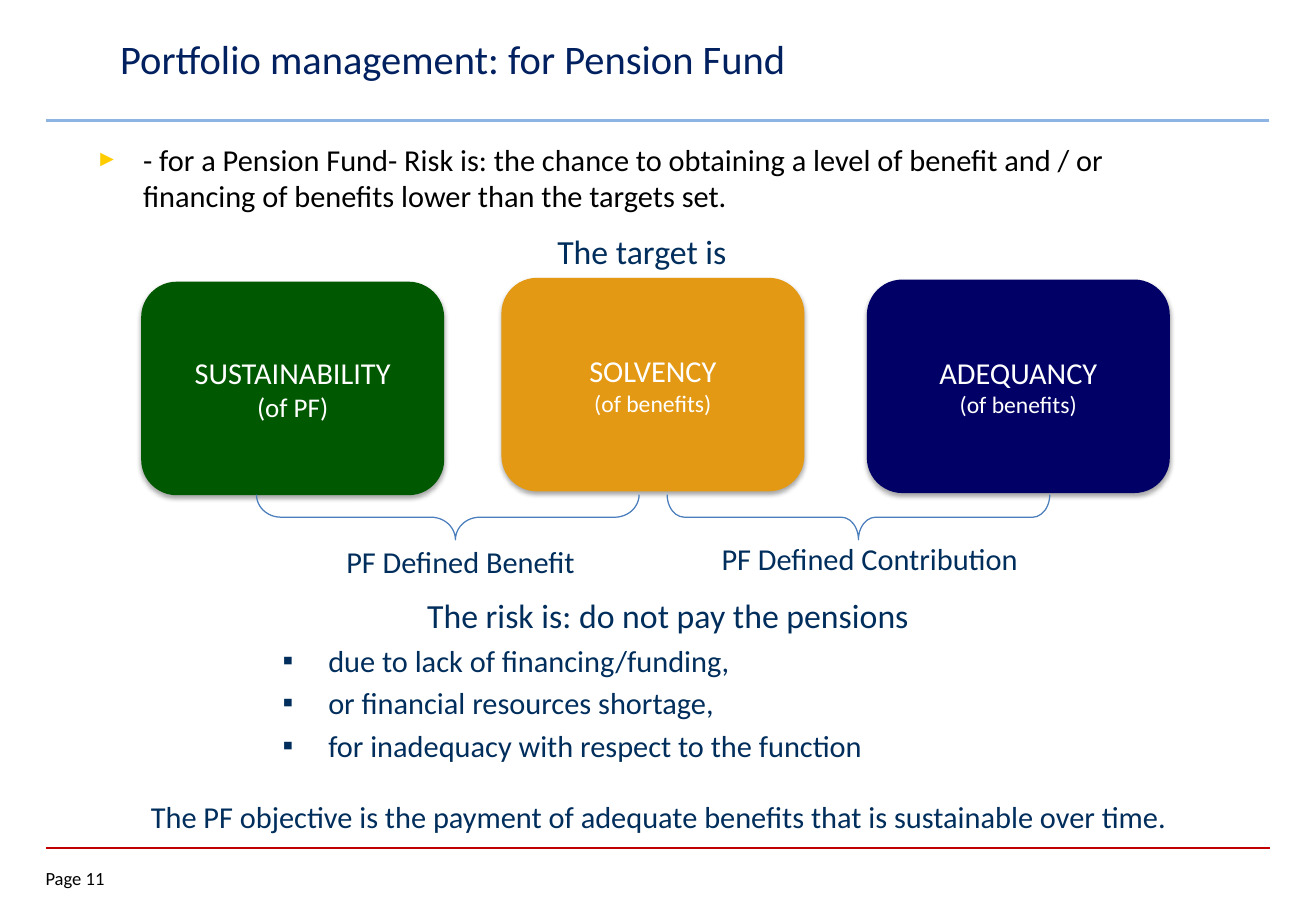
from dataclasses import dataclass

from lxml.etree import SubElement
from pptx import Presentation
from pptx.dml.color import RGBColor
from pptx.enum.shapes import MSO_CONNECTOR, MSO_SHAPE
from pptx.enum.text import MSO_ANCHOR, MSO_AUTO_SIZE, PP_ALIGN
from pptx.oxml.ns import qn
from pptx.util import Pt


@dataclass(frozen=True)
class Theme:
    """Colours, font and type sizes of the slide."""
    font: str = "Calibri"
    title: str = "002060"
    body: str = "000000"
    accent: str = "002E5C"
    light: str = "FFFFFF"
    marker: str = "FFCC00"
    header_rule: str = "8EB4E3"
    footer_rule: str = "C00000"
    brace: str = "4B7EBC"
    sustainability: str = "005800"
    solvency: str = "E39913"
    adequacy: str = "000066"
    title_size: float = 24
    lead_size: float = 20
    body_size: float = 18
    note_size: float = 16
    small_size: float = 14
    page_size: float = 11


THEME = Theme()


def rgb(colour):
    """Turn a hex string into a colour."""
    return RGBColor.from_string(colour)


def points(box):
    """Turn a box of numbers into lengths in points."""
    return [Pt(value) for value in box]


def style(paragraph, size, colour, align=PP_ALIGN.LEFT):
    """Set the font and alignment of a paragraph."""
    paragraph.alignment = align
    paragraph.font.name = THEME.font
    paragraph.font.size = Pt(size)
    paragraph.font.color.rgb = rgb(colour)


def indent(paragraph, margin, first=0):
    """Set the left margin and first-line indent, returning the properties."""
    properties = paragraph._p.get_or_add_pPr()
    properties.set("marL", str(Pt(margin)))
    properties.set("indent", str(Pt(first)))
    return properties


def bullet(paragraph, symbol, margin, colour=THEME.accent, percent=100):
    """Give a paragraph a hanging bullet."""
    properties = indent(paragraph, margin, -margin)
    SubElement(SubElement(properties, qn("a:buClr")), qn("a:srgbClr"), val=colour)
    SubElement(properties, qn("a:buSzPct"), val=str(percent * 1000))
    SubElement(properties, qn("a:buFont"), typeface="Arial")
    SubElement(properties, qn("a:buChar"), char=symbol)


def add_text(slide, box, text, size, colour, align=PP_ALIGN.CENTER):
    """Add a wrapping text box with one paragraph and return its frame."""
    frame = slide.shapes.add_textbox(*points(box)).text_frame
    frame.word_wrap = True
    frame.text = text
    style(frame.paragraphs[0], size, colour, align)
    return frame


def add_rule(slide, left, top, width, colour, weight):
    """Draw a horizontal rule."""
    rule = slide.shapes.add_connector(
        MSO_CONNECTOR.STRAIGHT, *points((left, top, left + width, top)))
    rule.line.color.rgb = rgb(colour)
    rule.line.width = Pt(weight)
    SubElement(rule._element.spPr, qn("a:effectLst"))


def add_header(slide, box, heading):
    """Place the title with the rule below it."""
    left, top, width, height = box
    title = slide.shapes.title
    title.left, title.top, title.width, title.height = points(box)
    frame = title.text_frame
    frame.text = heading
    frame.auto_size = MSO_AUTO_SIZE.NONE
    frame.vertical_anchor = MSO_ANCHOR.MIDDLE
    indent(frame.paragraphs[0], 36)
    style(frame.paragraphs[0], THEME.title_size, THEME.title)
    add_rule(slide, left - 0.5, top + height + 0.7, 724.5, THEME.header_rule, 1.5)


def add_footer(slide, box, page):
    """Place the bottom rule and the page number."""
    left, top, width, height = box
    add_rule(slide, left, top, width, THEME.footer_rule, 1)
    frame = add_text(slide, (left - 0.5, top + 11.5, 52.5, height - 11.5), page,
                     THEME.page_size, THEME.body, PP_ALIGN.LEFT)
    frame.margin_left = frame.margin_right = frame.margin_top = frame.margin_bottom = 0


def add_definition(slide, box, text):
    """Place the bulleted definition of risk."""
    frame = add_text(slide, box, "", THEME.body_size, THEME.body, PP_ALIGN.LEFT)
    definition = frame.paragraphs[0]
    bullet(definition, "►", 28, THEME.marker, 75)
    definition.text = text


def add_target(slide, box, colour, name, scope, scope_size):
    """Place one target card with its name and scope."""
    card = slide.shapes.add_shape(MSO_SHAPE.ROUNDED_RECTANGLE, *points(box))
    card.fill.solid()
    card.fill.fore_color.rgb = rgb(colour)
    card.line.fill.background()
    card.shadow.inherit = False
    effects = card._element.spPr.find(qn("a:effectLst"))
    shadow = SubElement(effects, qn("a:outerShdw"), blurRad=str(Pt(3.1)),
                        dist=str(Pt(1.8)), dir="5400000", rotWithShape="0")
    black = SubElement(shadow, qn("a:srgbClr"), val="000000")
    SubElement(black, qn("a:alpha"), val="35000")
    frame = card.text_frame
    frame.word_wrap = True
    frame.vertical_anchor = MSO_ANCHOR.MIDDLE
    frame.text = f"{name}\n{scope}"
    for paragraph, size in zip(frame.paragraphs, (THEME.body_size, scope_size)):
        style(paragraph, size, THEME.light, PP_ALIGN.CENTER)


def add_plan(slide, box, bend, tip, label, label_box):
    """Place a downward brace filling the box, with the plan's label."""
    left, top, width, height = box
    brace = slide.shapes.add_shape(
        MSO_SHAPE.RIGHT_BRACE,
        *points((left + (width - height) / 2, top + (height - width) / 2, height, width)))
    brace.rotation = 90
    brace.adjustments[0] = bend
    brace.adjustments[1] = tip
    brace.fill.background()
    brace.line.color.rgb = rgb(THEME.brace)
    brace.line.width = Pt(0.75)
    brace.shadow.inherit = False
    add_text(slide, label_box, label, THEME.body_size, THEME.accent)


def add_risks(slide, box, heading, causes):
    """Place the risk heading and its bulleted causes."""
    frame = add_text(slide, box, heading, THEME.lead_size, THEME.accent)
    for cause in causes:
        paragraph = frame.add_paragraph()
        paragraph.text = cause
        bullet(paragraph, "▪", 27)
        paragraph.space_before = Pt(3.6)
        style(paragraph, THEME.body_size, THEME.accent)


def main():
    """Build the pension fund slide."""
    deck = Presentation()
    deck.slide_width, deck.slide_height = Pt(780), Pt(540)
    slide = deck.slides.add_slide(deck.slide_layouts[5])
    add_footer(slide, (27.5, 502.5, 725.5, 27.5), "Page 11")
    add_header(slide, (28, -1.4, 634, 72), "Portfolio management: for Pension Fund")
    add_definition(
        slide, (49.7, 80, 674.5, 51),
        "- for a Pension Fund- Risk is: the chance to obtaining a level of benefit "
        "and / or financing of benefits lower than the targets set.")
    add_text(slide, (72, 133.2, 617, 34), "The target is", THEME.lead_size, THEME.accent)
    targets = (
        (83.7, 167, THEME.sustainability, "SUSTAINABILITY", "(of PF)", THEME.note_size),
        (297.2, 164.7, THEME.solvency, "SOLVENCY", "(of benefits)", THEME.small_size),
        (513.8, 165.7, THEME.adequacy, "ADEQUANCY", "(of benefits)", THEME.small_size),
    )
    for left, top, *content in targets:
        add_target(slide, (left, top, 179.6, 126.6), *content)
    add_plan(slide, (152, 293.2, 226.8, 26.8), 0.54, 0.48,
             "PF Defined Benefit", (188, 318.2, 170, 25))
    add_plan(slide, (395.4, 293.2, 226.8, 26.8), 0.38, 0.5,
             "PF Defined Contribution", (408, 316.8, 215, 25))
    add_risks(slide, (160.5, 349.2, 471, 111.6), "The risk is: do not pay the pensions",
              ("due to lack of financing/funding,",
               "or financial resources shortage,",
               "for inadequacy with respect to the function"))
    add_text(slide, (28, 469.4, 725, 32.4),
             "The PF objective is the payment of adequate benefits that is sustainable over time.",
             THEME.body_size, THEME.accent)
    deck.save("out.pptx")


if __name__ == "__main__":
    main()
